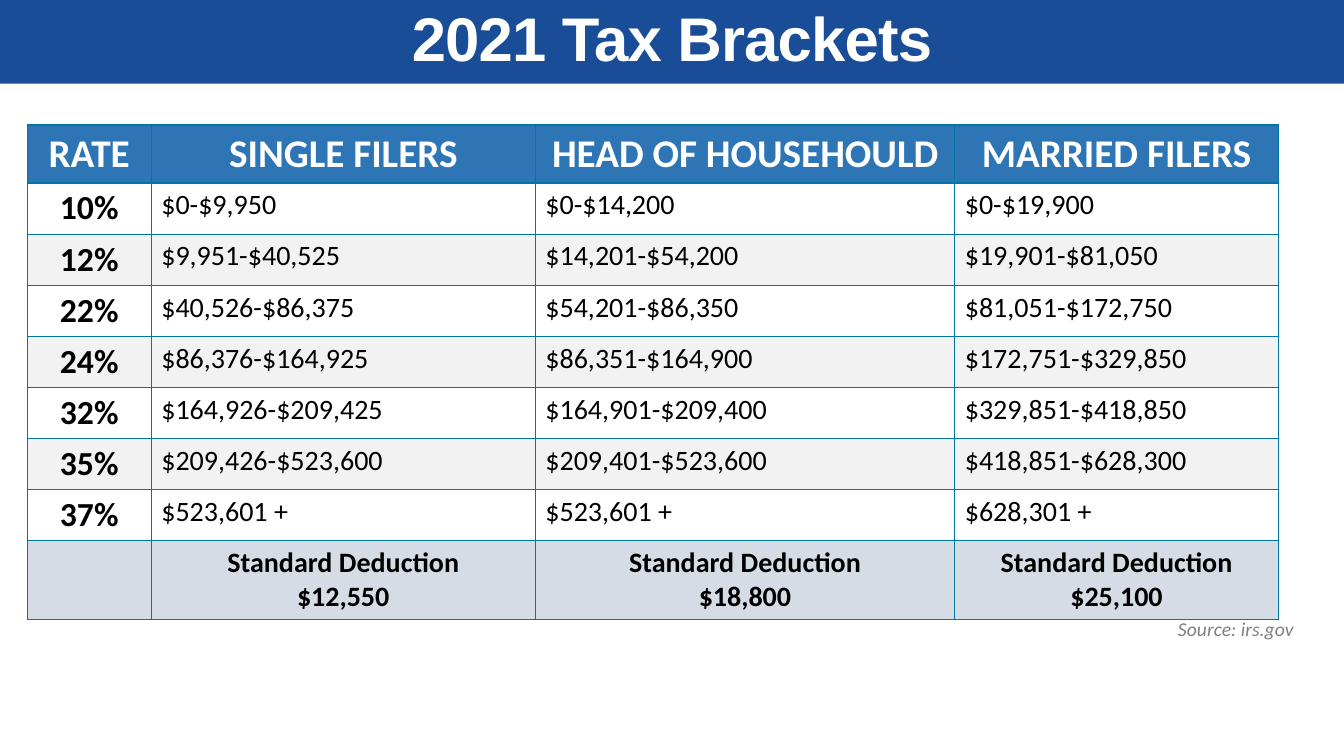
import pptx
import pptx.util
import pptx.dml.color
import pptx.enum.shapes
import pptx.enum.text
import pptx.oxml

Inches = pptx.util.Inches
Pt = pptx.util.Pt
RGBColor = pptx.dml.color.RGBColor
PP_ALIGN = pptx.enum.text.PP_ALIGN
MSO_ANCHOR = pptx.enum.text.MSO_ANCHOR

BAND_BLUE = RGBColor(0x1A, 0x4D, 0x98)
HEADER_BLUE = RGBColor(0x2E, 0x75, 0xB6)
BORDER_BLUE = RGBColor(0x00, 0x76, 0xA3)
DEDUCTION_BLUE = RGBColor(0xD6, 0xDC, 0xE5)
STRIPE_GREY = RGBColor(0xF2, 0xF2, 0xF2)
SOURCE_GREY = RGBColor(0x80, 0x80, 0x80)
WHITE = RGBColor(0xFF, 0xFF, 0xFF)
BLACK = RGBColor(0x00, 0x00, 0x00)

COLUMN_SHARES = [1.23, 3.81, 4.16, 3.21]
HEADER_HEIGHT, BRACKET_HEIGHT, DEDUCTION_HEIGHT = 0.57, 0.5, 0.76

HEADERS = ["RATE", "SINGLE FILERS", "HEAD OF HOUSEHOULD", "MARRIED FILERS"]
BRACKETS = [
    ["10%", "$0-$9,950", "$0-$14,200", "$0-$19,900"],
    ["12%", "$9,951-$40,525", "$14,201-$54,200", "$19,901-$81,050"],
    ["22%", "$40,526-$86,375", "$54,201-$86,350", "$81,051-$172,750"],
    ["24%", "$86,376-$164,925", "$86,351-$164,900", "$172,751-$329,850"],
    ["32%", "$164,926-$209,425", "$164,901-$209,400", "$329,851-$418,850"],
    ["35%", "$209,426-$523,600", "$209,401-$523,600", "$418,851-$628,300"],
    ["37%", "$523,601 +", "$523,601 +", "$628,301 +"],
]
DEDUCTIONS = ["$12,550", "$18,800", "$25,100"]


def add_run(p, text, size, color, font="Calibri", bold=False, italic=False):
    r = p.add_run()
    r.text = text
    r.font.name = font
    r.font.size = Pt(size)
    r.font.color.rgb = color
    r.font.bold = bold
    r.font.italic = italic
    return r


def add_title_band(s, left, top, width, height):
    sp = s.shapes.add_shape(pptx.enum.shapes.MSO_SHAPE.RECTANGLE,
                            Inches(left), Inches(top), Inches(width), Inches(height))
    sp.shadow.inherit = False
    sp.fill.solid()
    sp.fill.fore_color.rgb = BAND_BLUE
    sp.line.fill.background()
    tf = sp.text_frame
    tf.word_wrap = True
    tf.vertical_anchor = MSO_ANCHOR.MIDDLE
    p = tf.paragraphs[0]
    p.alignment = PP_ALIGN.CENTER
    p.line_spacing = 0.9
    r = add_run(p, "2021 Tax Brackets", 44, WHITE, font="Arial", bold=True)
    r.font._element.set("spc", "-60")


def add_borders(cell):
    tc_pr = cell._tc.get_or_add_tcPr()
    for index, side in enumerate(("lnL", "lnR", "lnT", "lnB")):
        tc_pr.insert(index, pptx.oxml.parse_xml(
            f'<a:{side} xmlns:a="http://schemas.openxmlformats.org/drawingml/2006/main" '
            f'w="{Pt(1)}"><a:solidFill><a:srgbClr val="{BORDER_BLUE}"/></a:solidFill></a:{side}>'))


def fill_cell(cell, lines, size, color, fill, bold, centred):
    cell.fill.solid()
    cell.fill.fore_color.rgb = fill
    add_borders(cell)
    tf = cell.text_frame
    for i, line in enumerate(lines):
        p = tf.paragraphs[0] if i == 0 else tf.add_paragraph()
        p.alignment = PP_ALIGN.CENTER if centred else PP_ALIGN.LEFT
        add_run(p, line, size, color, bold=bold)


def add_bracket_table(s, left, top, width, height):
    heights = [HEADER_HEIGHT] + [BRACKET_HEIGHT] * len(BRACKETS) + [DEDUCTION_HEIGHT]
    table = s.shapes.add_table(len(heights), len(HEADERS), Inches(left), Inches(top),
                               Inches(width), Inches(height)).table
    for column, share in zip(table.columns, COLUMN_SHARES):
        column.width = Inches(width * share / sum(COLUMN_SHARES))
    for row, row_height in zip(table.rows, heights):
        row.height = Inches(height * row_height / sum(heights))

    for col, header in enumerate(HEADERS):
        fill_cell(table.cell(0, col), [header], 28, WHITE, HEADER_BLUE, True, True)
    for row, bracket in enumerate(BRACKETS, 1):
        fill = WHITE if row % 2 else STRIPE_GREY
        for col, text in enumerate(bracket):
            is_rate = col == 0
            fill_cell(table.cell(row, col), [text], 24 if is_rate else 20,
                      BLACK, fill, is_rate, is_rate)
    last = len(heights) - 1
    fill_cell(table.cell(last, 0), [], 20, BLACK, DEDUCTION_BLUE, True, True)
    for col, amount in enumerate(DEDUCTIONS, 1):
        fill_cell(table.cell(last, col), ["Standard Deduction", amount], 20,
                  BLACK, DEDUCTION_BLUE, True, True)


def add_source(s, left, top, width, height):
    tf = s.shapes.add_textbox(Inches(left), Inches(top), Inches(width),
                              Inches(height)).text_frame
    tf.word_wrap = False
    tf.auto_size = pptx.enum.text.MSO_AUTO_SIZE.SHAPE_TO_FIT_TEXT
    p = tf.paragraphs[0]
    p.alignment = PP_ALIGN.RIGHT
    add_run(p, "Source: irs.gov", 14, SOURCE_GREY, italic=True)


def main():
    prs = pptx.Presentation()
    prs.slide_width = Inches(13.33)
    prs.slide_height = Inches(7.5)
    s = prs.slides.add_slide(prs.slide_layouts[6])
    add_bracket_table(s, 0.27, 1.24, 12.41, 4.83)
    add_title_band(s, 0, 0, 13.33, 0.83)
    add_source(s, 11.57, 6.07, 1.36, 0.34)
    prs.save("out.pptx")


if __name__ == "__main__":
    main()
